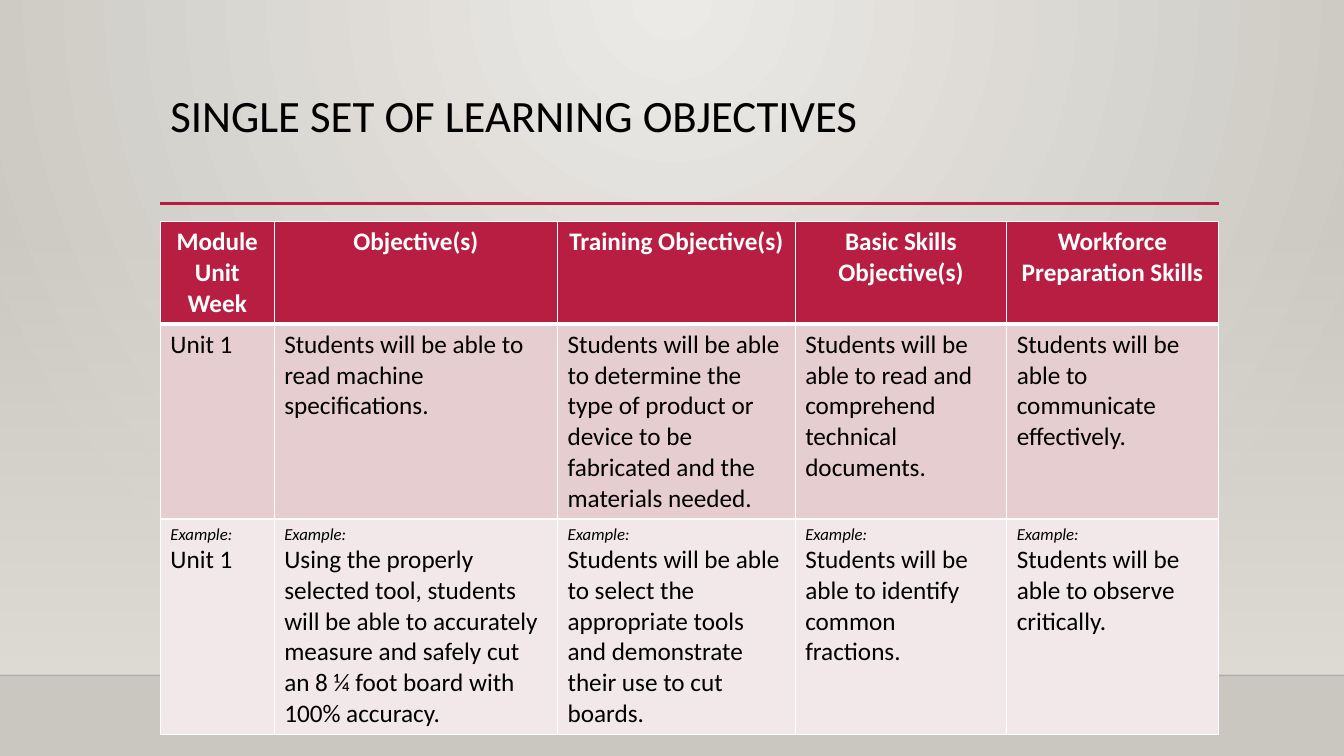
from dataclasses import dataclass

from pptx import Presentation
from pptx.dml.color import RGBColor
from pptx.enum.shapes import MSO_CONNECTOR as Connector, MSO_SHAPE as Shape
from pptx.enum.text import MSO_ANCHOR as Anchor, MSO_AUTO_SIZE as AutoSize, PP_ALIGN as Align
from pptx.oxml import parse_xml
from pptx.oxml.ns import nsdecls
from pptx.util import Cm, Pt


@dataclass(frozen=True)
class Theme:
    font: str = "Calibri"
    title_size: int = 32
    body_size: int = 18
    label_size: int = 12
    text: str = "000000"
    white: str = "FFFFFF"
    accent: str = "B71E42"
    row_fills: tuple = ("B71E42", "E6CDCF", "F3E8E9")
    backdrop: tuple = (("ECEAE7", 100), ("CAC7C1", 100))
    wall: tuple = (("DFDBD5", 0), ("DFDBD5", 100))
    floor_edge: str = "000001"


theme = Theme()


def gradient(stops, direction):
    """Two-stop gradient; each stop is a colour and its opacity in percent."""
    stop_xml = "".join(
        f'<a:gs pos="{position}"><a:srgbClr val="{color}">'
        f'<a:alpha val="{opacity * 1000}"/></a:srgbClr></a:gs>'
        for position, (color, opacity) in zip((0, 100000), stops))
    return f'<a:gradFill {nsdecls("a")} rotWithShape="1"><a:gsLst>{stop_xml}</a:gsLst>{direction}</a:gradFill>'


def add_run(paragraph, text, size, color, bold=False, italic=False):
    run = paragraph.add_run()
    run.text = text
    font = run.font
    font.name, font.size = theme.font, Pt(size)
    font.bold, font.italic = bold, italic
    font.color.rgb = RGBColor.from_string(color)


presentation = Presentation()
presentation.slide_width, presentation.slide_height = Cm(33.87), Cm(19.05)
slide = presentation.slides.add_slide(presentation.slide_layouts[5])
left, right = Cm(4.04), Cm(30.73)

# Background
circle = '<a:path path="circle"><a:fillToRect l="43000" t="0" r="43000" b="100000"/></a:path>'
slide.element.cSld.insert(0, parse_xml(
    f'<p:bg {nsdecls("p")}><p:bgPr>{gradient(theme.backdrop, circle)}'
    f'<a:effectLst {nsdecls("a")}/></p:bgPr></p:bg>'))

# Wall
wall_top, floor_top = Cm(5.61), Cm(17.02)
wall = slide.shapes.add_shape(Shape.RECTANGLE, 0, wall_top, presentation.slide_width, floor_top - wall_top)
wall.shadow.inherit = False
wall.line.fill.background()
wall.element.spPr.prstGeom.addnext(parse_xml(gradient(theme.wall, '<a:lin ang="5400000" scaled="0"/>')))

# Floor edge and title rule
for start, end, y, color, width, opacity in (
        (0, presentation.slide_width, floor_top, theme.floor_edge, 1, 20),
        (left, right, Cm(5.13), theme.accent, 2.5, 100)):
    line = slide.shapes.add_connector(Connector.STRAIGHT, start, y, end, y)
    line.line.width = Pt(width)
    line.line.color.rgb = RGBColor.from_string(color)
    line.element.spPr.append(parse_xml(f'<a:effectLst {nsdecls("a")}/>'))
    for color_element in line.element.spPr.xpath(".//a:srgbClr"):
        color_element.append(parse_xml(f'<a:alpha {nsdecls("a")} val="{opacity * 1000}"/>'))

# Title
title = slide.shapes.title
title.left, title.top, title.width, title.height = left, Cm(2.24), Cm(26.67), Cm(2.92)
title.text_frame.vertical_anchor = Anchor.TOP
title.text_frame.auto_size = AutoSize.NONE
title.text_frame.word_wrap = True
paragraph = title.text_frame.paragraphs[0]
paragraph.alignment = Align.LEFT
paragraph.line_spacing = 0.9
add_run(paragraph, "SINGLE SET OF LEARNING OBJECTIVES", theme.title_size, theme.text)

# Objectives table: each cell is a list of paragraphs
example = "Example:"
rows = (
    (["Module", "Unit", "Week"], ["Objective(s)"], ["Training Objective(s)"],
     ["Basic Skills Objective(s)"], ["Workforce Preparation Skills"]),
    (["Unit 1"],
     ["Students will be able to read machine specifications."],
     ["Students will be able to determine the type of product or device to be fabricated "
      "and the materials needed."],
     ["Students will be able to read and comprehend technical documents."],
     ["Students will be able to communicate effectively."]),
    ([example, "Unit 1"],
     [example, "Using the properly selected tool, students will be able to accurately measure "
      "and safely cut an 8 ¼ foot board with 100% accuracy."],
     [example, "Students will be able to select the appropriate tools and demonstrate "
      "their use to cut boards."],
     [example, "Students will be able to identify common fractions."],
     [example, "Students will be able to observe critically."]),
)
column_widths = (2.87, 7.14, 5.99, 5.33, 5.33)
row_heights = (2.58, 4.91, 5.43)
table = slide.shapes.add_table(len(rows), len(column_widths), left, Cm(5.59),
                               Cm(sum(column_widths)), Cm(sum(row_heights))).table
for column, width in zip(table.columns, column_widths):
    column.width = Cm(width)

for row_index, row in enumerate(rows):
    table.rows[row_index].height = Cm(row_heights[row_index])
    header = row_index == 0
    border_widths = {"L": 1, "R": 1, "T": 3 if row_index == 1 else 1, "B": 3 if header else 1}
    for column_index, texts in enumerate(row):
        cell = table.cell(row_index, column_index)
        properties = cell._tc.get_or_add_tcPr()
        for side, width in border_widths.items():
            properties.append(parse_xml(
                f'<a:ln{side} {nsdecls("a")} w="{Pt(width)}"><a:solidFill>'
                f'<a:srgbClr val="{theme.white}"/></a:solidFill></a:ln{side}>'))
        cell.fill.solid()
        cell.fill.fore_color.rgb = RGBColor.from_string(theme.row_fills[row_index])
        for text_index, text in enumerate(texts):
            frame = cell.text_frame
            paragraph = frame.add_paragraph() if text_index else frame.paragraphs[0]
            paragraph.alignment = Align.CENTER if header else Align.LEFT
            is_label = text == example
            add_run(paragraph, text, theme.label_size if is_label else theme.body_size,
                    theme.white if header else theme.text, bold=header, italic=is_label)

presentation.save("out.pptx")
